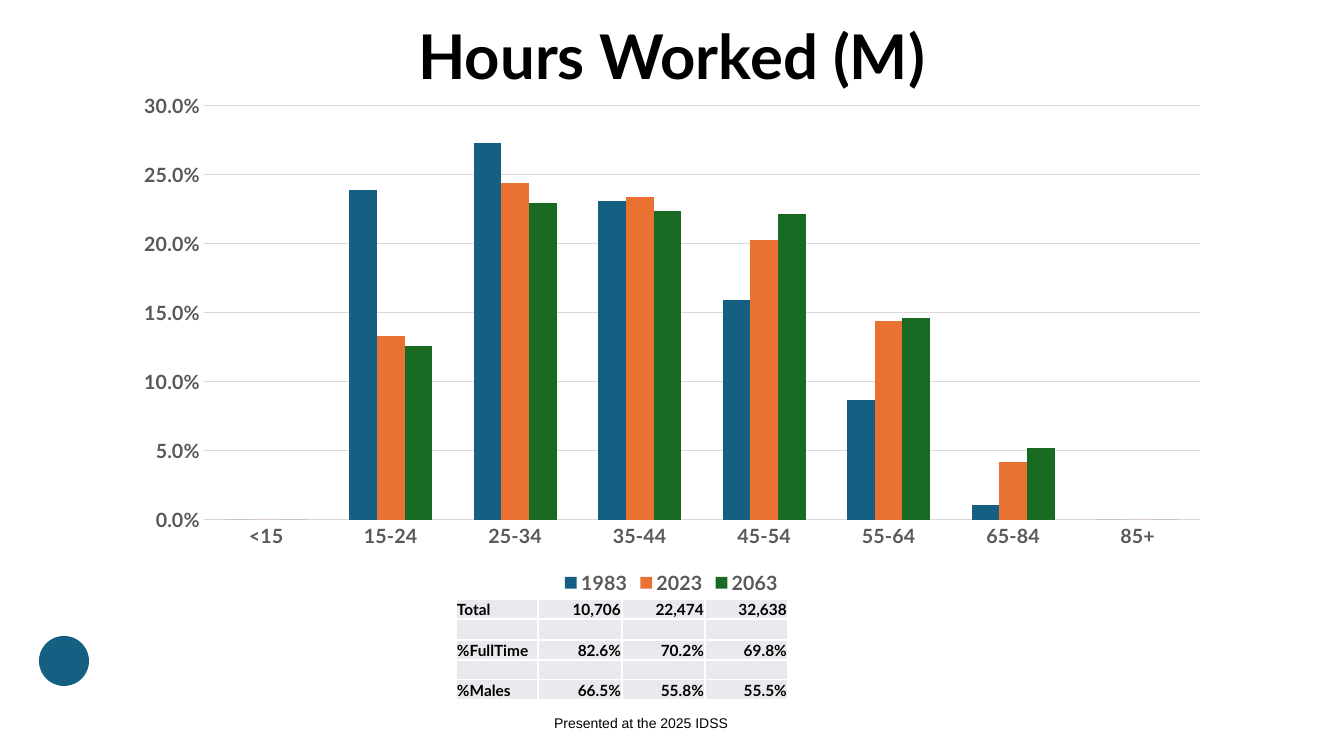
from lxml.etree import SubElement
from pptx import Presentation
from pptx.chart.data import CategoryChartData
from pptx.dml.color import RGBColor
from pptx.enum.chart import XL_CHART_TYPE, XL_LEGEND_POSITION, XL_TICK_MARK
from pptx.enum.shapes import MSO_SHAPE
from pptx.enum.text import MSO_ANCHOR, PP_ALIGN
from pptx.oxml import parse_xml
from pptx.oxml.ns import nsdecls, qn
from pptx.util import Emu, Pt

BLACK = RGBColor(0, 0, 0)
GREY = RGBColor(0x59, 0x59, 0x59)
RULE = RGBColor(0xD9, 0xD9, 0xD9)
PALE = RGBColor(0xE8, 0xEA, 0xED)
BLUE = RGBColor(0x15, 0x60, 0x82)
AMBER = RGBColor(0xE9, 0x71, 0x32)
GREEN = RGBColor(0x19, 0x6B, 0x24)


def px(num):
    return Emu(round(num * 12192000 / 1344))


def style(font, size, color, bold=True, name="Lato"):
    font.name = name
    font.size = Pt(size)
    font.bold = bold
    font.color.rgb = color


deck = Presentation()
deck.slide_width, deck.slide_height = px(1344), px(756)
slide = deck.slides.add_slide(deck.slide_layouts[6])
shapes = slide.shapes

badge = shapes.add_shape(MSO_SHAPE.OVAL, px(39), px(636), px(50), px(50))
badge.shadow.inherit = False
badge.fill.solid()
badge.fill.fore_color.rgb = BLUE
badge.line.fill.background()

labels = [
    ("Presented at the 2025 IDSS", (446, 711, 390, 20), 10, False, "Arial", MSO_ANCHOR.BOTTOM, 0),
    ("Hours Worked (M)", (145, 21, 1054, 45), 44, True, "Lato", MSO_ANCHOR.TOP, 5),
]
for words, rect, size, bold, face, anchor, inset in labels:
    frame = shapes.add_textbox(*map(px, rect)).text_frame
    frame.word_wrap = True
    frame.vertical_anchor = anchor
    frame.margin_top = frame.margin_bottom = px(inset)
    frame.margin_left = frame.margin_right = 0
    para = frame.paragraphs[0]
    para.alignment = PP_ALIGN.CENTER
    para.line_spacing = 0.9 if bold else 1.0
    run = para.add_run()
    run.text = words
    style(run.font, size, BLACK, bold, face)

data = CategoryChartData(number_format="0.0%")
data.categories = ["<15", "15-24", "25-34", "35-44", "45-54", "55-64", "65-84", "85+"]
years = [
    ("1983", BLUE, [0, 0.239, 0.273, 0.231, 0.159, 0.087, 0.011, 0]),
    ("2023", AMBER, [0, 0.133, 0.244, 0.234, 0.203, 0.144, 0.042, 0]),
    ("2063", GREEN, [0, 0.126, 0.23, 0.224, 0.222, 0.146, 0.052, 0]),
]
for year, color, shares in years:
    data.add_series(year, shares)
chart = shapes.add_chart(
    XL_CHART_TYPE.COLUMN_CLUSTERED, px(122), px(84), px(1099), px(515), data
).chart
style(chart.font, 10, BLACK, False)
chart.has_title = False
chart.has_legend = True
chart.legend.position = XL_LEGEND_POSITION.BOTTOM
chart.legend.include_in_layout = False
style(chart.legend.font, 14, GREY)

plot = chart.plots[0]
plot.gap_width = 150
plot.overlap = 0
plot.vary_by_categories = False
for bars, (year, color, shares) in zip(plot.series, years):
    bars.format.fill.solid()
    bars.format.fill.fore_color.rgb = color

ages, scale = chart.category_axis, chart.value_axis
for axis in (ages, scale):
    axis.major_tick_mark = axis.minor_tick_mark = XL_TICK_MARK.NONE
    axis.format.line.fill.background()
    style(axis.tick_labels.font, 14, GREY)
scale.minimum_scale, scale.maximum_scale, scale.major_unit = 0, 0.3, 0.05
scale.tick_labels.number_format = "0.0%"
scale.tick_labels.number_format_is_linked = False
scale.major_gridlines.format.line.color.rgb = RULE
scale.major_gridlines.format.line.width = Pt(0.75)

area = chart._chartSpace.chart.plotArea
for old in area.findall(qn("c:layout")):
    area.remove(old)
area.insert(0, parse_xml(
    f'<c:layout {nsdecls("c")}><c:manualLayout><c:layoutTarget val="inner"/>'
    '<c:xMode val="edge"/><c:yMode val="edge"/>'
    f'<c:x val="{82 / 1099}"/><c:y val="{22 / 515}"/>'
    f'<c:w val="{996 / 1099}"/><c:h val="{414 / 515}"/>'
    '</c:manualLayout></c:layout>'
))

rows = [
    ["Total", "10,706", "22,474", "32,638"],
    [""] * 4,
    ["%FullTime", "82.6%", "70.2%", "69.8%"],
    [""] * 4,
    ["%Males", "66.5%", "55.8%", "55.5%"],
]
table = shapes.add_table(5, 4, px(456), px(599), px(332), px(101)).table
table.first_row = table.horz_banding = False
for col, wide in zip(table.columns, [82, 84, 83, 83]):
    col.width = px(wide)
for row, high in zip(table.rows, [20, 21, 20, 20, 20]):
    row.height = px(high)
for row, words in zip(table.rows, rows):
    for spot, (cell, word) in enumerate(zip(row.cells, words)):
        cell.margin_left = cell.margin_right = cell.margin_top = px(1)
        cell.margin_bottom = 0
        cell.vertical_anchor = MSO_ANCHOR.BOTTOM
        props = cell._tc.get_or_add_tcPr()
        for side in ("lnL", "lnR", "lnT", "lnB"):
            props.append(parse_xml(
                f'<a:{side} {nsdecls("a")} w="12700"><a:solidFill>'
                f'<a:srgbClr val="FFFFFF"/></a:solidFill></a:{side}>'
            ))
        cell.fill.solid()
        cell.fill.fore_color.rgb = PALE
        para = cell.text_frame.paragraphs[0]
        para.alignment = PP_ALIGN.RIGHT if spot else PP_ALIGN.LEFT
        if word:
            run = para.add_run()
            run.text = word
            style(run.font, 11, BLACK)
        else:
            SubElement(para._p, qn("a:endParaRPr"), sz="1100")

deck.save("out.pptx")
